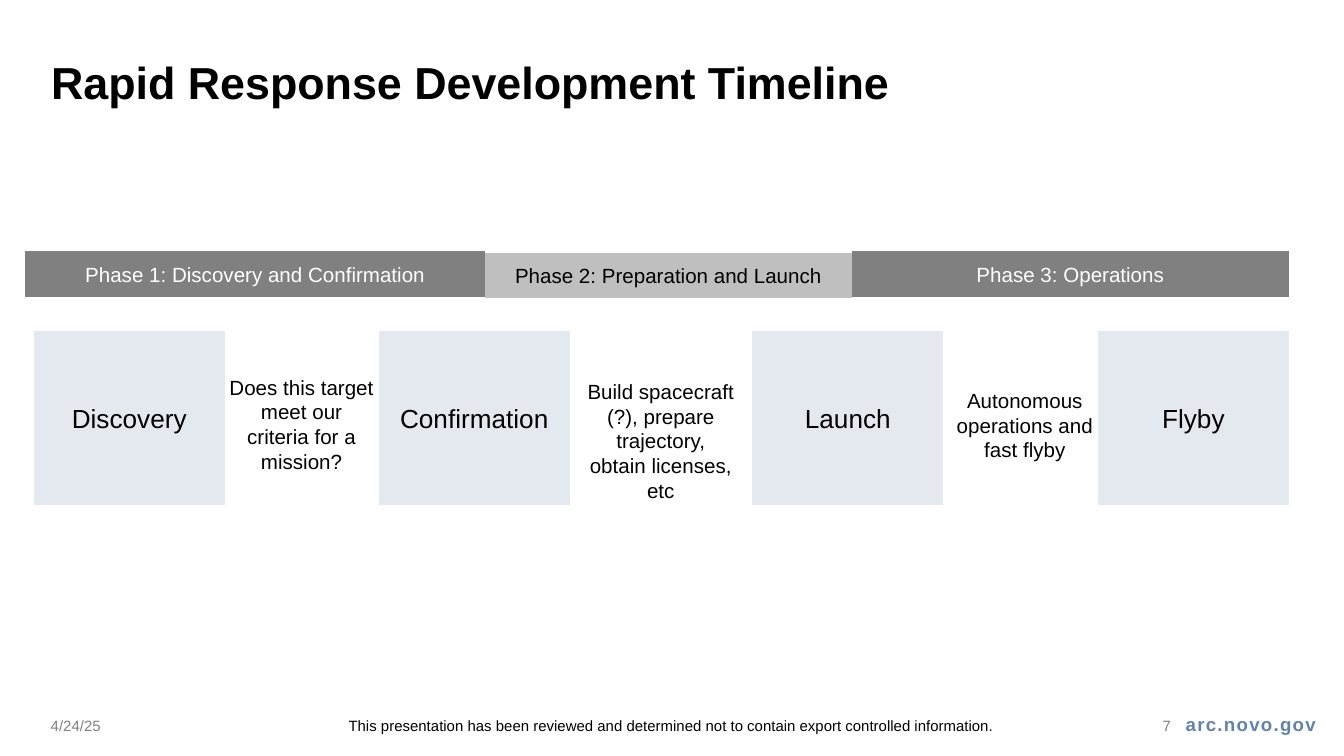
"""Build the rapid response development timeline slide."""
import pptx
import pptx.dml.color
import pptx.enum.shapes
import pptx.enum.text
import pptx.util

Cm = pptx.util.Cm
Pt = pptx.util.Pt
RGBColor = pptx.dml.color.RGBColor
Align = pptx.enum.text.PP_ALIGN
Anchor = pptx.enum.text.MSO_ANCHOR

BLACK = RGBColor(0x00, 0x00, 0x00)
WHITE = RGBColor(0xFF, 0xFF, 0xFF)
GRAY = RGBColor(0x80, 0x80, 0x80)
SILVER = RGBColor(0xBF, 0xBF, 0xBF)
PALE_BLUE = RGBColor(0xE4, 0xE9, 0xEF)
STEEL_BLUE = RGBColor(0x60, 0x83, 0xAA)

PHASE_LEFT = 0.48
PHASES = [
    ("Phase 1: Discovery and Confirmation", 4.75, 8.69, GRAY, WHITE),
    ("Phase 2: Preparation and Launch", 4.78, 6.93, SILVER, BLACK),
    ("Phase 3: Operations", 4.75, 8.26, GRAY, WHITE),
]
MILESTONES = [("Discovery", 0.64), ("Confirmation", 7.16), ("Launch", 14.22), ("Flyby", 20.75)]
ACTIVITIES = [
    ("Does this target meet our criteria for a mission?", 4.06, 6.96, 2.13),
    ("Build spacecraft (?), prepare trajectory, obtain licenses, etc", 10.85, 7.04, 2.62),
    ("Autonomous operations and fast flyby", 17.73, 7.21, 1.68),
]
FOOTERS = [
    ("4/24/25", 0.71, 3.96, Align.LEFT, GRAY),
    ("This presentation has been reviewed and determined not to contain "
     "export controlled information.", 4.65, 16.08, Align.CENTER, BLACK),
    ("7", 20.75, 1.63, Align.RIGHT, GRAY),
]


def apply(target, values):
    """Set each attribute in values on the target."""
    for name, value in values.items():
        setattr(target, name, value)


def write(box, text, size, color, align=Align.CENTER, anchor=Anchor.MIDDLE, bold=False):
    """Fill a box with one formatted paragraph and return its span."""
    frame = box.text_frame
    apply(frame, {"word_wrap": True, "vertical_anchor": anchor,
                  "auto_size": pptx.enum.text.MSO_AUTO_SIZE.NONE})
    para = frame.paragraphs[0]
    para.alignment = align
    span = para.add_run()
    span.text = text
    apply(span.font, {"name": "Arial", "size": Pt(size), "bold": bold})
    span.font.color.rgb = color
    return span


def add_title(page, text):
    """Place and format the title placeholder."""
    title = page.shapes.title
    apply(title, {"left": Cm(0.71), "top": Cm(0.91), "width": Cm(23.65), "height": Cm(1.19)})
    write(title, text, 24, BLACK, Align.LEFT, Anchor.TOP, True)


def add_label(page, area, text, size, color, **layout):
    """Add a text box over an area in centimetres and return its span."""
    box = page.shapes.add_textbox(*map(Cm, area))
    return write(box, text, size, color, **layout)


def add_process(page, area, text, size, fill, color):
    """Add a filled process box over an area in centimetres."""
    kind = pptx.enum.shapes.MSO_SHAPE.FLOWCHART_PROCESS
    box = page.shapes.add_shape(kind, *map(Cm, area))
    box.shadow.inherit = False
    box.fill.solid()
    box.fill.fore_color.rgb = fill
    box.line.fill.background()
    write(box, text, size, color)


def add_footer(page):
    """Add the date, notice, page number and site address."""
    for text, left, width, align, color in FOOTERS:
        add_label(page, (left, 13.34, width, 0.76), text, 8, color, align=align)
    site = add_label(page, (21.69, 13.11, 3.43, 1.17), "arc.novo.gov", 10, STEEL_BLUE,
                     align=Align.RIGHT, bold=True)
    site.font._element.set("spc", "70")


def add_timeline(page):
    """Add the phase bar, the milestones and the activities between them."""
    for text, left in MILESTONES:
        add_process(page, (left, 6.25, 3.61, 3.3), text, 14, PALE_BLUE, BLACK)
    left = PHASE_LEFT
    for text, top, width, fill, color in PHASES:
        add_process(page, (left, top, width, 0.86), text, 11, fill, color)
        left += width
    for text, left, top, height in ACTIVITIES:
        add_label(page, (left, top, 3.28, height), text, 11, BLACK, anchor=Anchor.TOP)


def main():
    """Create the deck and save it."""
    deck = pptx.Presentation()
    apply(deck, {"slide_width": Cm(25.4), "slide_height": Cm(14.29)})
    page = deck.slides.add_slide(deck.slide_layouts.get_by_name("Title Only"))
    add_title(page, "Rapid Response Development Timeline")
    add_footer(page)
    add_timeline(page)
    deck.save("out.pptx")


if __name__ == "__main__":
    main()
